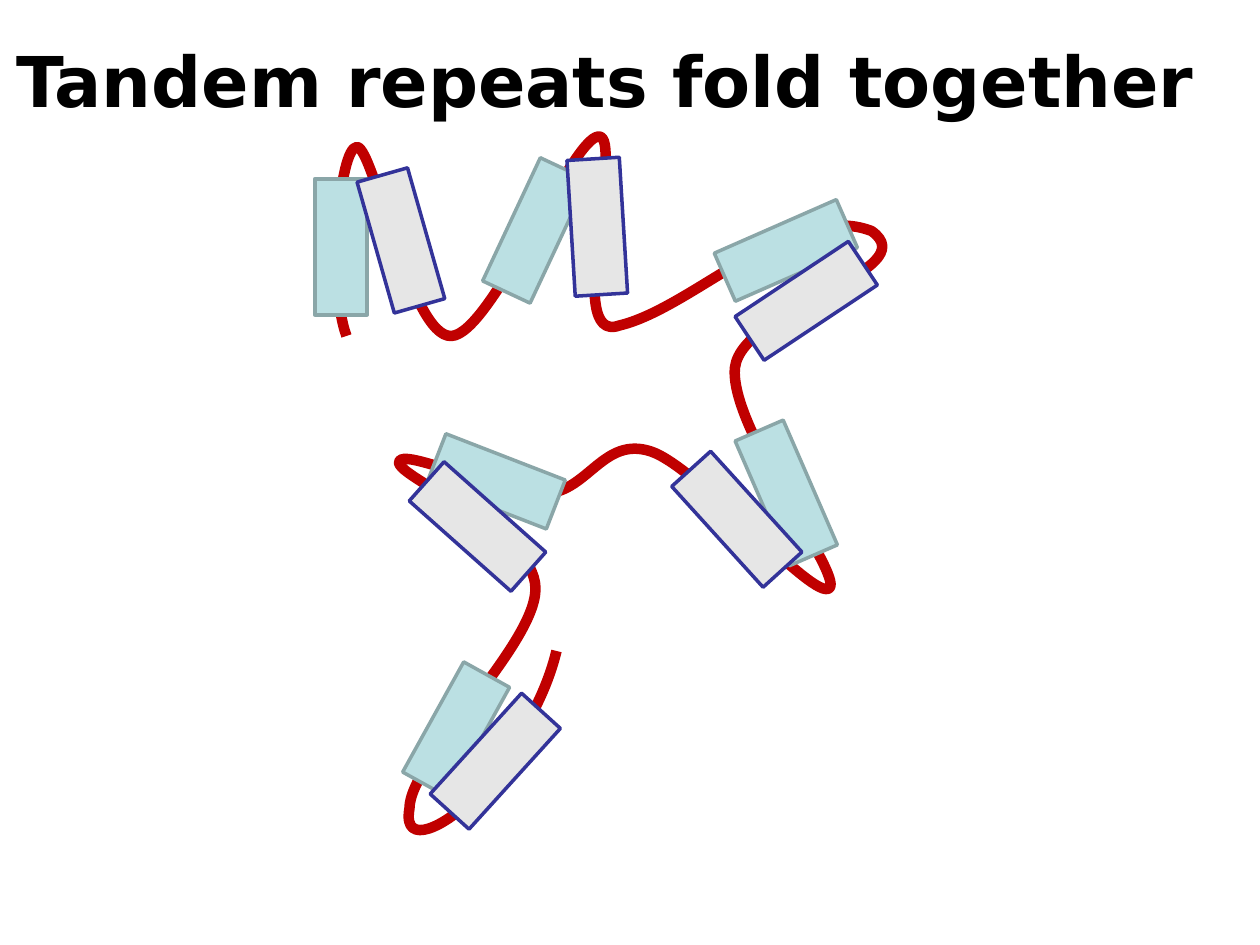
"""Build the slide on tandem repeats that fold together."""
from dataclasses import dataclass

from lxml import etree
from pptx import Presentation
from pptx import util as u
from pptx.dml.color import RGBColor
from pptx.enum import shapes, text
from pptx.oxml import ns


@dataclass(frozen=True)
class Theme:
    """Colours, type sizes and line widths of the slide."""
    chain: str = "C00000"
    ink: str = "000000"
    first_helix: tuple = ("BBE0E3", "8AA6A8")
    second_helix: tuple = ("E6E6E6", "333399")
    font: str = "DejaVu Sans"
    title_size: int = 40
    chain_width: int = 6
    helix_width: int = 2


def apply_format(target, values):
    """Set each named attribute on the target."""
    for name, value in values.items():
        setattr(target, name, value)


def bend(freeform):
    """Turn every three line segments of a freeform into one cubic curve."""
    outline = next(freeform.element.iter(ns.qn("a:path")))
    segments = outline.findall(ns.qn("a:lnTo"))
    for first in range(0, len(segments), 3):
        curve = etree.SubElement(outline, ns.qn("a:cubicBezTo"))
        for segment in segments[first:first + 3]:
            curve.append(segment[0])
            outline.remove(segment)


class SlideBuilder:
    """Draw elements on one slide, measured in grid columns and rows."""
    COLUMNS, ROWS = 120, 90

    def __init__(self, deck, theme):
        """Add a blank slide to the deck."""
        self.theme = theme
        self.slide = deck.slides.add_slide(deck.slide_layouts[6])
        self.column = deck.slide_width / self.COLUMNS
        self.row = deck.slide_height / self.ROWS

    def at(self, x, y):
        """Turn a column and a row into slide lengths."""
        return u.Emu(round(x * self.column)), u.Emu(round(y * self.row))

    def outline(self, shape, colour, width):
        """Give a shape a plain line and no shadow."""
        shape.shadow.inherit = False
        shape.line.color.rgb = RGBColor.from_string(colour)
        shape.line.width = u.Pt(width)

    def title(self, wording, left, top, width, height):
        """Add the centred bold heading."""
        box = self.slide.shapes.add_textbox(*self.at(left, top), *self.at(width, height))
        apply_format(box.text_frame, {"word_wrap": False,
                                      "auto_size": text.MSO_AUTO_SIZE.SHAPE_TO_FIT_TEXT})
        heading = box.text_frame.paragraphs[0]
        heading.alignment = text.PP_ALIGN.CENTER
        run = heading.add_run()
        run.text = wording
        apply_format(run.font, {"name": self.theme.font, "bold": True,
                                "size": u.Pt(self.theme.title_size)})
        run.font.color.rgb = RGBColor.from_string(self.theme.ink)

    def chain(self, start, curves):
        """Draw the protein chain as one open line through the curves."""
        builder = self.slide.shapes.build_freeform(*self.at(*start))
        builder.add_line_segments([self.at(*point) for curve in curves for point in curve],
                                  close=False)
        backbone = builder.convert_to_shape()
        bend(backbone)
        backbone.fill.background()
        self.outline(backbone, self.theme.chain, self.theme.chain_width)

    def helix(self, colours, left, top, angle, length=12.96, thickness=5):
        """Add one turned helix block."""
        block = self.slide.shapes.add_shape(shapes.MSO_SHAPE.RECTANGLE, *self.at(left, top),
                                            *self.at(length, thickness))
        fill, edge = colours
        block.fill.solid()
        block.fill.fore_color.rgb = RGBColor.from_string(fill)
        self.outline(block, edge, self.theme.helix_width)
        block.rotation = angle


CHAIN_START = (33, 32)
CHAIN_CURVES = [
    ((31.2, 27.1), (32.3, 14), (34, 14)),
    ((35.6, 14), (39.1, 32.2), (43, 32)),
    ((46.8, 31.8), (54.4, 13.2), (57, 13)),
    ((59.6, 12.8), (53.5, 33), (59, 31)),
    ((66.1, 29.3), (75.5, 19.1), (83, 22)),
    ((88.4, 25.8), (70.7, 29.3), (70, 35)),
    ((69.4, 40.7), (80.3, 54.7), (79, 56)),
    ((77.6, 57.4), (66.5, 44.5), (62, 43)),
    ((57.5, 41.5), (56, 46.8), (52, 47)),
    ((48, 47.2), (38.2, 42.5), (38, 44)),
    ((37.8, 45.5), (50.9, 50.5), (51, 56)),
    ((51.1, 61.4), (39, 72.4), (39, 77)),
    ((38.3, 80.9), (42.7, 78.5), (45, 76)),
    ((47.3, 73.4), (51.5, 68.2), (53, 62)),
]
FIRST_HELICES = [
    (26, 21, 270), (44.5, 19.45, 295.1), (68.5, 21.35, 336.3, 12.7),
    (68.4, 44.45, 66.5), (37.45, 67, 299, 12), (41.15, 43.35, 21.2, 12.2),
]
SECOND_HELICES = [
    (31.7, 20.4, 74.1), (50.4, 19.1, 86.5), (70.3, 26.15, 146.4),
    (63.7, 46.95, 227.8), (39, 47.65, 41.6), (40.7, 70, 312.2),
]


def main():
    """Build and save the deck."""
    deck = Presentation()
    apply_format(deck, {"slide_width": u.Inches(10), "slide_height": u.Inches(7.5)})
    theme = Theme()
    page = SlideBuilder(deck, theme)
    page.chain(CHAIN_START, CHAIN_CURVES)
    page.title("Tandem repeats fold together", 0, 3, 115.2, 9.24)
    for colours, helices in ((theme.first_helix, FIRST_HELICES),
                             (theme.second_helix, SECOND_HELICES)):
        for placement in helices:
            page.helix(colours, *placement)
    deck.save("out.pptx")


if __name__ == "__main__":
    main()
